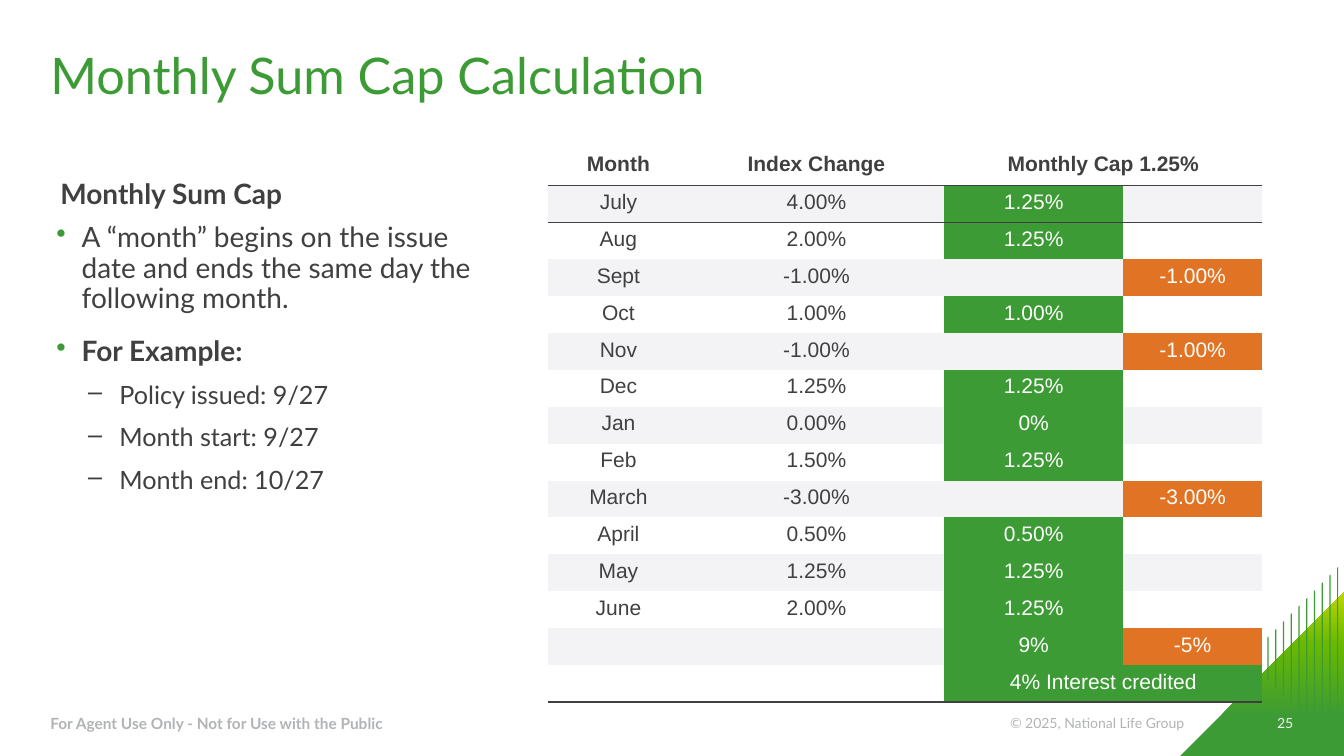
from lxml.etree import SubElement
from pptx import Presentation
from pptx.dml.color import RGBColor
from pptx.enum.shapes import MSO_SHAPE
from pptx.enum.text import MSO_ANCHOR, PP_ALIGN
from pptx.oxml import parse_xml
from pptx.oxml.ns import nsdecls, qn
from pptx.util import Cm, Pt

COLORS = {
    "green": "3C9B34", "mid green": "3D9C33", "leaf": "69B800", "lime": "BED600",
    "orange": "E07424", "ink": "414041", "grey": "B1B3B5", "pale": "F3F3F5",
    "white": "FFFFFF",
}
NO_GRID_STYLE = "{2D5ABB26-0587-4C30-8999-92F81FD0307C}"


def color(name):
    return RGBColor.from_string(COLORS[name])


def write(paragraph, text, *, size, font="Lato", ink="ink", bold=False,
          align=PP_ALIGN.LEFT, spacing=None, before=0, after=0,
          level=0, bullet=None, bullet_ink="ink", indent=(0, 0)):
    """Fill one paragraph; indent is (left margin, first line) in cm."""
    paragraph.alignment = align
    paragraph.level = level
    if bullet:
        props = paragraph._p.get_or_add_pPr()
        props.set("marL", str(Cm(indent[0])))
        props.set("indent", str(Cm(indent[1])))
        tint = SubElement(props, qn("a:buClr"))
        SubElement(tint, qn("a:srgbClr"), val=COLORS[bullet_ink])
        SubElement(props, qn("a:buChar"), char=bullet)
    paragraph.line_spacing = spacing
    paragraph.space_before, paragraph.space_after = Pt(before), Pt(after)
    run = paragraph.add_run()
    run.text = text
    run.font.name, run.font.size, run.font.bold = font, Pt(size), bold
    run.font.color.rgb = color(ink)


class SlideBuilder:
    def __init__(self, slide):
        self.slide = slide

    def text(self, box, paragraphs, anchor=MSO_ANCHOR.TOP, inset=(0, 0), wrap=True):
        frame = self.slide.shapes.add_textbox(*map(Cm, box)).text_frame
        frame.word_wrap = wrap
        frame.vertical_anchor = anchor
        frame.margin_left = frame.margin_right = Cm(inset[0])
        frame.margin_top = frame.margin_bottom = Cm(inset[1])
        for i, (words, style) in enumerate(paragraphs):
            paragraph = frame.add_paragraph() if i else frame.paragraphs[0]
            write(paragraph, words, **style)

    def corner(self, box, stops):
        triangle = self.slide.shapes.add_shape(MSO_SHAPE.RIGHT_TRIANGLE, *map(Cm, box))
        triangle.rotation = 270
        triangle.shadow.inherit = False
        triangle.line.fill.background()
        triangle.fill.gradient()
        triangle.fill.gradient_angle = 0
        stop_list = triangle._element.spPr.find(".//" + qn("a:gsLst"))
        for stop in list(stop_list):
            stop_list.remove(stop)
        for percent, name in stops:
            stop = SubElement(stop_list, qn("a:gs"), pos=str(percent * 1000))
            SubElement(stop, qn("a:srgbClr"), val=COLORS[name])

    def bars(self, left, top, bottom, count, step, width):
        """Thin upright bars, each longer than the last at both ends."""
        outline = None
        for i in range(count):
            x, high, low = left + i * step, top - i * step, bottom + i * step
            corners = [(x + width, low), (x, low - width), (x, high + width), (x + width, high)]
            start, *rest = [(Cm(a), Cm(b)) for a, b in corners]
            if outline is None:
                outline = self.slide.shapes.build_freeform(*start)
            else:
                outline.move_to(*start)
            outline.add_line_segments(rest, close=True)
        shape = outline.convert_to_shape()
        shape.shadow.inherit = False
        shape.fill.solid()
        shape.fill.fore_color.rgb = color("green")
        shape.line.fill.background()

    def rule(self, cell, side):
        cell._tc.get_or_add_tcPr().insert(0, parse_xml(
            f'<a:{side} {nsdecls("a")} w="12700"><a:solidFill>'
            f'<a:srgbClr val="{COLORS["ink"]}"/></a:solidFill></a:{side}>'))

    def table(self, left, top, widths, heights, rows):
        frame = self.slide.shapes.add_table(
            len(rows), len(widths), Cm(left), Cm(top), Cm(sum(widths)), Cm(sum(heights)))
        table = frame.table
        table.horz_banding = table.first_row = False
        table._tbl.tblPr.find(qn("a:tableStyleId")).text = NO_GRID_STYLE
        for column, width in zip(table.columns, widths):
            column.width = Cm(width)
        last = len(rows) - 1
        for r, values in enumerate(rows):
            table.rows[r].height = Cm(heights[r])
            for c, value in enumerate(values):
                cell = table.cell(r, c)
                # Gains are green, losses orange, the rest banded
                tinted = r > 0 and c > 1 and value
                band = "pale" if r % 2 else "white"
                cell.fill.solid()
                cell.fill.fore_color.rgb = color(
                    ("green", "orange")[c - 2] if tinted else band)
                if r:
                    cell.margin_left = cell.margin_right = cell.margin_bottom = 0
                    cell.margin_top = Cm(0.13) if value else 0
                else:
                    cell.vertical_anchor = MSO_ANCHOR.MIDDLE
                if value:
                    write(cell.text_frame.paragraphs[0], value, size=15, font="Arial",
                          ink="white" if tinted else "ink", bold=r == 0,
                          align=PP_ALIGN.CENTER)
                if r in (0, last):
                    self.rule(cell, "lnB")
                elif r == 1:
                    self.rule(cell, "lnT")
        for r in (0, last):
            table.cell(r, 2).merge(table.cell(r, 3))


def main():
    deck = Presentation()
    deck.slide_width, deck.slide_height = Cm(33.87), Cm(19.05)
    page = SlideBuilder(deck.slides.add_slide(deck.slide_layouts[6]))

    # Corner decoration
    page.corner((29.69, 14.86, 4.24, 4.24),
                [(14, "green"), (26, "mid green"), (67, "leaf"), (100, "lime")])
    page.bars(left=31.55, top=16.43, bottom=16.76, count=12, step=0.195, width=0.03)

    # Title and footer
    page.text((1.27, 1.27, 31.32, 1.4),
              [("Monthly Sum Cap Calculation", dict(size=36, ink="green", spacing=0.9))],
              anchor=MSO_ANCHOR.MIDDLE)
    page.text((24.89, 18.01, 4.95, 0.43),
              [("© 2025, National Life Group",
                dict(size=10, ink="grey", align=PP_ALIGN.RIGHT))])
    page.text((1.27, 17.98, 8.61, 0.48),
              [("For Agent Use Only - Not for Use with the Public",
                dict(size=11, ink="grey", bold=True))],
              anchor=MSO_ANCHOR.MIDDLE, wrap=False)
    page.text((30.76, 18.01, 1.83, 0.43),
              [("25", dict(size=10, ink="pale", align=PP_ALIGN.RIGHT))],
              anchor=MSO_ANCHOR.MIDDLE)

    # Explanation
    point = dict(size=20, spacing=0.9, after=6, bullet="•", bullet_ink="green",
                 indent=(0.64, -0.64))
    example = dict(size=18, spacing=0.9, before=5, after=6, level=1, bullet="–",
                   indent=(1.59, -0.79))
    page.text((1.42, 5.64, 10.92, 7.16), [
        ("A “month” begins on the issue date and ends the same day the following month.", point),
        ("For Example:", dict(point, before=10, bold=True)),
        ("Policy issued: 9/27", example),
        ("Month start: 9/27", example),
        ("Month end: 10/27", example),
    ])
    page.text((1.27, 4.42, 12.37, 0.89),
              [("Monthly Sum Cap", dict(size=20, bold=True, spacing=0.9, after=6))],
              inset=(0.25, 0.13))

    # Monthly results
    results = [
        ("Month", "Index Change", "Monthly Cap 1.25%", ""),
        ("July", "4.00%", "1.25%", ""),
        ("Aug", "2.00%", "1.25%", ""),
        ("Sept", "-1.00%", "", "-1.00%"),
        ("Oct", "1.00%", "1.00%", ""),
        ("Nov", "-1.00%", "", "-1.00%"),
        ("Dec", "1.25%", "1.25%", ""),
        ("Jan", "0.00%", "0%", ""),
        ("Feb", "1.50%", "1.25%", ""),
        ("March", "-3.00%", "", "-3.00%"),
        ("April", "0.50%", "0.50%", ""),
        ("May", "1.25%", "1.25%", ""),
        ("June", "2.00%", "1.25%", ""),
        ("", "", "9%", "-5%"),
        ("", "", "4% Interest credited", ""),
    ]
    page.table(13.82, 3.58, widths=[3.53, 6.45, 4.5, 3.51],
               heights=[1.09] + [0.93] * (len(results) - 1), rows=results)

    deck.save("out.pptx")


if __name__ == "__main__":
    main()
